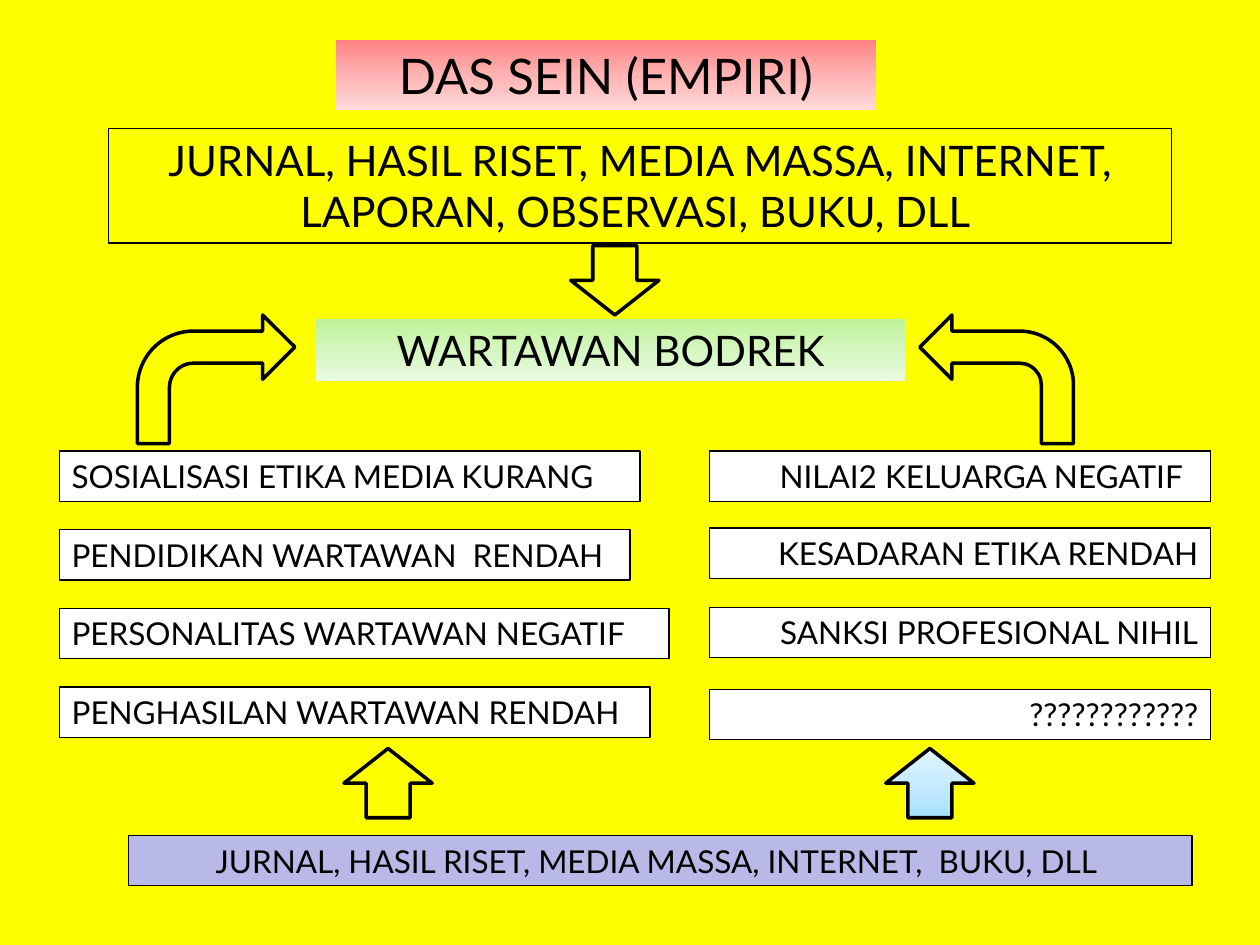
from copy import deepcopy
from dataclasses import dataclass

from pptx import Presentation
from pptx.dml.color import RGBColor
from pptx.enum.shapes import MSO_SHAPE
from pptx.enum.text import MSO_ANCHOR, MSO_AUTO_SIZE, PP_ALIGN
from pptx.oxml.ns import qn
from pptx.util import Inches, Pt


@dataclass(frozen=True)
class Theme:
    """Colours, type sizes and line widths of the slide."""
    font: str = "Lato"
    ink: str = "000000"
    page: str = "FFFF00"
    white: str = "FFFFFF"
    lilac: str = "B9B9E7"
    red: tuple = ("FF8080", "FFB3B3", "FFDADA")
    green: tuple = ("BEF397", "D5F6C0", "EAFAE0")
    blue: tuple = ("A6E1FF", "C7EBFF", "E3F5FF")
    title: int = 28
    head: int = 24
    body: int = 18
    thin: float = 0.75
    thick: float = 2


THEME = Theme()
WIDTH, HEIGHT = Inches(10), Inches(7.5)
COLS, ROWS = 100, 75
LEFT = PP_ALIGN.LEFT
MID = PP_ALIGN.CENTER
RIGHT = PP_ALIGN.RIGHT


def blend(shape, tints):
    """Fill a shape from top to bottom with three tints."""
    shape.fill.gradient()
    shape.fill.gradient_angle = 270
    stops = shape._element.spPr.find(qn("a:gradFill")).find(qn("a:gsLst"))
    stops.insert(1, deepcopy(stops[0]))
    for rank, (stop, tint) in enumerate(zip(shape.fill.gradient_stops, tints)):
        stop.position = rank / 2
        stop.color.rgb = RGBColor.from_string(tint)


def draw(slide, kind, cell, fill, line, width):
    """Add a preset shape at a grid cell of left, top, columns and rows."""
    left, top, wide, high = cell
    shape = slide.shapes.add_shape(
        kind, int(WIDTH * left / COLS), int(HEIGHT * top / ROWS),
        int(WIDTH * wide / COLS), int(HEIGHT * high / ROWS))
    shape.shadow.inherit = False
    if fill is None:
        shape.fill.background()
    elif isinstance(fill, tuple):
        blend(shape, fill)
    else:
        shape.fill.solid()
        shape.fill.fore_color.rgb = RGBColor.from_string(fill)
    shape.line.color.rgb = RGBColor.from_string(line)
    shape.line.width = Pt(width)
    return shape


def label(slide, cell, text, size, align=MID, fill=None, line=THEME.ink):
    """Add a box with one paragraph of text."""
    shape = draw(slide, MSO_SHAPE.RECTANGLE, cell, fill, line, THEME.thin)
    frame = shape.text_frame
    frame.word_wrap = True
    frame.auto_size = MSO_AUTO_SIZE.SHAPE_TO_FIT_TEXT
    frame.vertical_anchor = MSO_ANCHOR.TOP
    para = frame.paragraphs[0]
    para.alignment = align
    run = para.add_run()
    run.text = text
    run.font.name = THEME.font
    run.font.size = Pt(size)
    run.font.color.rgb = RGBColor.from_string(THEME.ink)


def arrow(slide, cell, kind=MSO_SHAPE.DOWN_ARROW, fill=None, turn=0):
    """Add a block arrow with a thick outline."""
    shape = draw(slide, kind, cell, fill, THEME.ink, THEME.thick)
    shape.rotation = turn
    return shape


def causes(slide):
    """Add the two columns of causes."""
    first, pitch, high = 35.8, 6.24, 4
    left = (("SOSIALISASI ETIKA MEDIA KURANG", 46.1),
            ("PENDIDIKAN WARTAWAN  RENDAH", 45.3),
            ("PERSONALITAS WARTAWAN NEGATIF", 48.4),
            ("PENGHASILAN WARTAWAN RENDAH", 46.9))
    for row, (text, wide) in enumerate(left):
        label(slide, (4.7, first + row * pitch, wide, high), text,
              THEME.body, LEFT, THEME.white)
    right = (("NILAI2 KELUARGA NEGATIF  ", first),
             ("KESADARAN ETIKA RENDAH", 41.9),
             ("SANKSI PROFESIONAL NIHIL", 48.2),
             ("????????????", 54.7))
    for text, top in right:
        label(slide, (56.3, top, 39.8, high), text,
              THEME.body, RIGHT, THEME.white)


def bends(slide):
    """Add the two bent arrows that lead to the problem."""
    bend = MSO_SHAPE.BENT_ARROW
    arrow(slide, (10.9, 25, 12.5, 10.2), bend)
    back = arrow(slide, (73, 25, 12.2, 10.2), bend)
    back.adjustments[3] = 0.42
    back._element.spPr.find(qn("a:xfrm")).set("flipH", "1")


def main():
    """Build the slide and save it."""
    deck = Presentation()
    deck.slide_width, deck.slide_height = WIDTH, HEIGHT
    slide = deck.slides.add_slide(deck.slide_layouts[6])
    back = slide.background.fill
    back.solid()
    back.fore_color.rgb = RGBColor.from_string(THEME.page)

    label(slide, (26.6, 3.1, 43, 5.7), "DAS SEIN (EMPIRI)",
          THEME.title, fill=THEME.red, line=THEME.page)
    label(slide, (25, 25.3, 46.9, 5), "WARTAWAN BODREK",
          THEME.head, fill=THEME.green, line=THEME.page)
    causes(slide)
    bends(slide)
    label(slide, (8.6, 10.2, 84.4, 9.1),
          "JURNAL, HASIL RISET, MEDIA MASSA, INTERNET, "
          "LAPORAN, OBSERVASI, BUKU, DLL ", THEME.head)
    arrow(slide, (45.3, 19.5, 7, 5.5))
    label(slide, (10.2, 66.3, 84.4, 4),
          "JURNAL, HASIL RISET, MEDIA MASSA, INTERNET,  BUKU, DLL ",
          THEME.body, fill=THEME.lilac)
    for left, fill in ((70.3, THEME.blue), (27.3, None)):
        arrow(slide, (left, 59.4, 7, 5.5), fill=fill, turn=180)
    deck.save("out.pptx")


if __name__ == "__main__":
    main()
